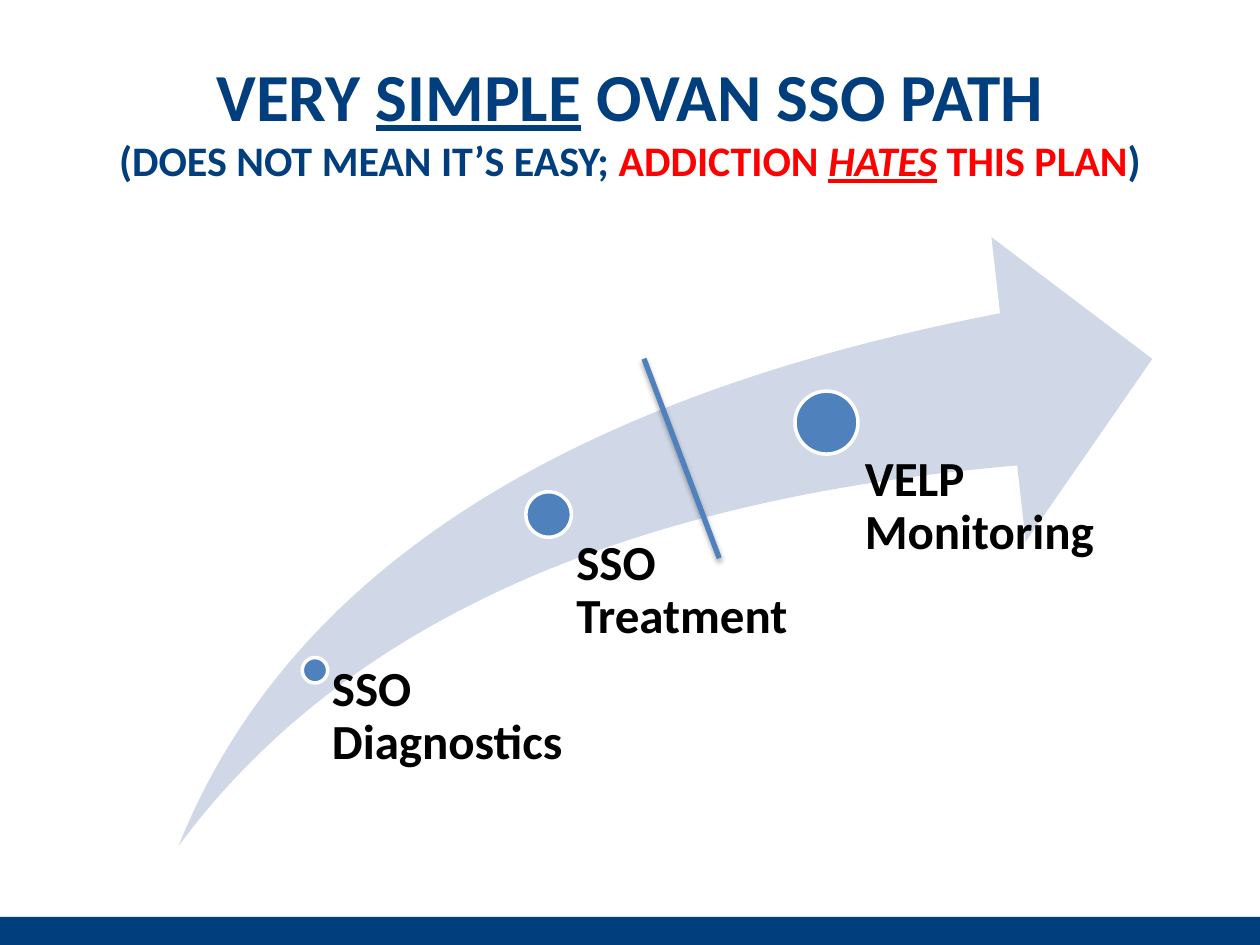
import lxml.etree
import pptx
import pptx.dml.color
import pptx.enum.shapes
import pptx.enum.text
import pptx.oxml
import pptx.oxml.ns
import pptx.util

Pt = pptx.util.Pt
SHAPES = pptx.enum.shapes.MSO_SHAPE
NAVY, BLUE, PALE, RED = "003E7E", "4F81BD", "D0D8E8", "FF0000"


def color(hex_string):
    return pptx.dml.color.RGBColor.from_string(hex_string)


def add_text(paragraph, text, size=28, fill=NAVY, italic=False, underline=False):
    run = paragraph.add_run()
    run.text = text
    font = run.font
    font.name, font.size, font.bold = "Calibri", Pt(size), True
    font.italic, font.underline = italic, underline
    font.color.rgb = color(fill)


presentation = pptx.Presentation()
presentation.slide_width, presentation.slide_height = Pt(720), Pt(540)
slide = presentation.slides.add_slide(presentation.slide_layouts[6])
shapes = slide.shapes

# Footer band and rising arrow
for kind, left, top, width, height, fill in [
    (SHAPES.RECTANGLE, 0, 524, 720, 16, NAVY),
    (SHAPES.SWOOSH_ARROW, 102, 135.5, 556.5, 348, PALE),
]:
    shape = shapes.add_shape(kind, Pt(left), Pt(top), Pt(width), Pt(height))
    shape.shadow.inherit = False
    shape.fill.solid()
    shape.fill.fore_color.rgb = color(fill)
    shape.line.fill.background()
shape.adjustments[0] = shape.adjustments[1] = 0.25

# Title in two lines
title = shapes.add_textbox(Pt(43), Pt(31), Pt(634), Pt(76))
frame = title.text_frame
frame.word_wrap = True
frame.margin_left = frame.margin_right = frame.margin_top = frame.margin_bottom = 0
paragraph = frame.paragraphs[0]
paragraph.alignment = pptx.enum.text.PP_ALIGN.CENTER
add_text(paragraph, "VERY ", size=38.4)
add_text(paragraph, "SIMPLE", size=38.4, underline=True)
add_text(paragraph, " OVAN SSO PATH", size=38.4)
paragraph.add_line_break()
add_text(paragraph, "(DOES NOT MEAN IT’S EASY; ", size=24)
add_text(paragraph, "ADDICTION ", size=24, fill=RED)
add_text(paragraph, "HATES", size=24, fill=RED, italic=True, underline=True)
add_text(paragraph, " THIS PLAN", size=24, fill=RED)
add_text(paragraph, ")", size=24)

# Milestones: dot centre and diameter, then label box and its left inset
for label, center_x, center_y, diameter, left, top, width, height, inset in [
    ("SSO Diagnostics", 180, 383, 14.5, 182, 379.5, 188, 63.5, 7.7),
    ("SSO Treatment", 313.5, 294, 26, 315.5, 307.5, 181.5, 80.5, 13.8),
    ("VELP Monitoring", 472.3, 241.5, 36, 475, 259.5, 183.5, 59, 19.2),
]:
    dot = shapes.add_shape(SHAPES.OVAL, Pt(center_x - diameter / 2),
                           Pt(center_y - diameter / 2), Pt(diameter), Pt(diameter))
    dot.shadow.inherit = False
    dot.fill.solid()
    dot.fill.fore_color.rgb = color(BLUE)
    dot.line.color.rgb = color("FFFFFF")
    dot.line.width = Pt(2)

    box = shapes.add_textbox(Pt(left), Pt(top), Pt(width), Pt(height))
    frame = box.text_frame
    frame.word_wrap = True
    frame.margin_left = Pt(inset)
    frame.margin_right = frame.margin_top = frame.margin_bottom = 0
    paragraph = frame.paragraphs[0]
    paragraph.line_spacing = 0.9
    add_text(paragraph, label, fill="000000")

# Divider across the arrow, with a soft shadow below
divider = shapes.add_connector(pptx.enum.shapes.MSO_CONNECTOR.STRAIGHT,
                               Pt(368), Pt(205), Pt(411), Pt(319))
divider.line.color.rgb = color(BLUE)
divider.line.width = Pt(3)
divider.element.spPr.append(pptx.oxml.parse_xml(
    f'<a:effectLst {pptx.oxml.ns.nsdecls("a")}>'
    f'<a:outerShdw blurRad="{Pt(3.1)}" dist="{Pt(1.8)}" dir="5400000" rotWithShape="0">'
    '<a:srgbClr val="000000"><a:alpha val="35000"/></a:srgbClr>'
    '</a:outerShdw></a:effectLst>'))

presentation.save("out.pptx")
